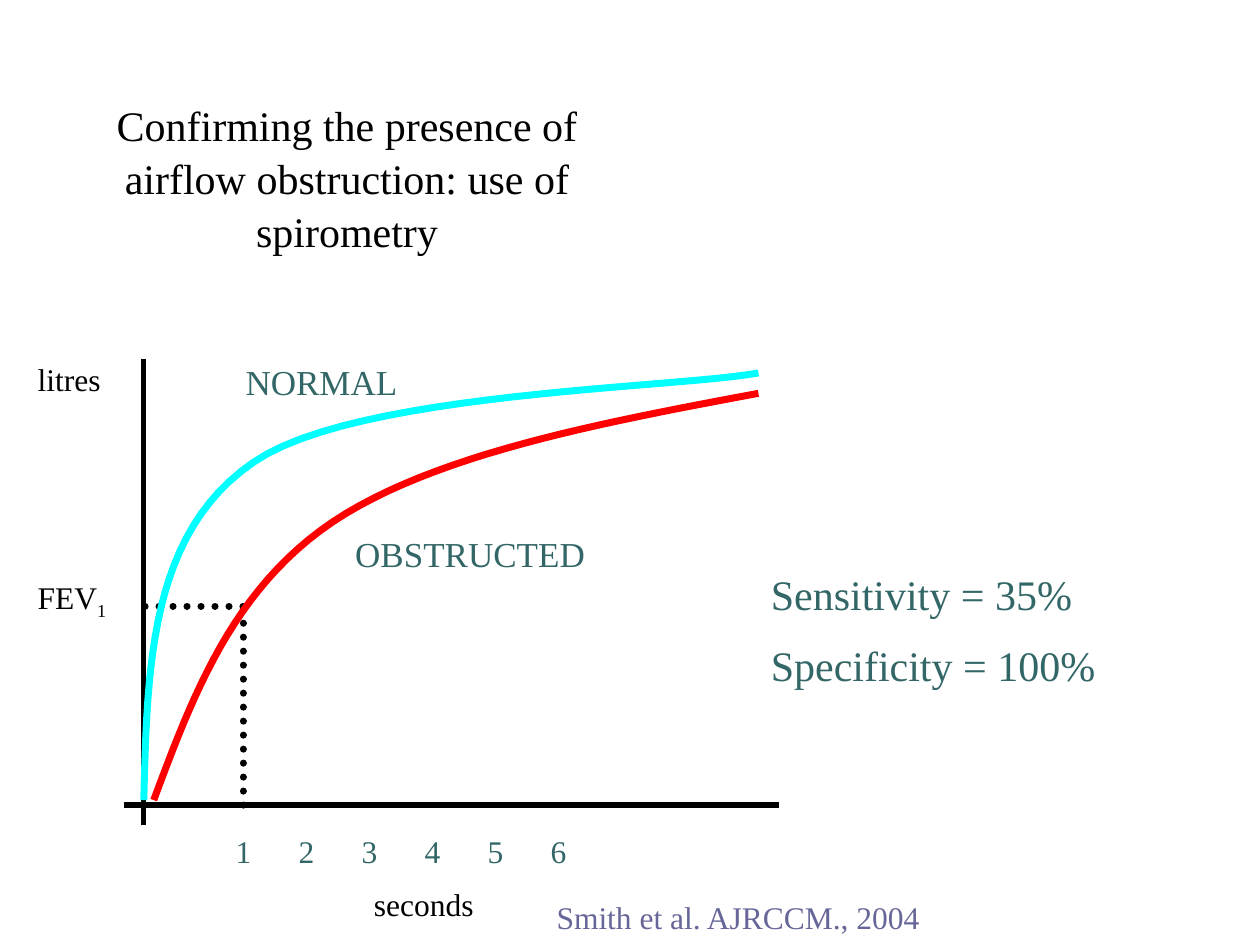
import lxml.etree
import pptx
import pptx.dml.color
import pptx.enum.dml
import pptx.enum.shapes
import pptx.enum.text
import pptx.oxml.ns
import pptx.util

Cm, Pt = pptx.util.Cm, pptx.util.Pt
qn = pptx.oxml.ns.qn
COLORS = {"ink": "000000", "teal": "336666", "cite": "666699",
          "normal": "00FFFF", "obstructed": "FF0000"}
FONT = "Times New Roman"


def rgb(name):
    return pptx.dml.color.RGBColor.from_string(COLORS[name])


def format_text(tf, size, color):
    tf.word_wrap = True
    tf.vertical_anchor = pptx.enum.text.MSO_ANCHOR.TOP
    for i, p in enumerate(tf.paragraphs):
        p.space_before = Pt(size / 2 if i else 0)
        for r in p.runs:
            r.font.name, r.font.size = FONT, Pt(size)
            r.font.color.rgb = rgb(color)


def add_text(shapes, box, text, size, color):
    tf = shapes.add_textbox(*(Cm(v) for v in box)).text_frame
    tf.text = text
    format_text(tf, size, color)
    return tf


def add_line(shapes, start, end, width, dotted=False):
    line = shapes.add_connector(pptx.enum.shapes.MSO_CONNECTOR.STRAIGHT,
                                *(Cm(v) for v in start + end))
    line.line.color.rgb = rgb("ink")
    line.line.width = Pt(width)
    if dotted:
        line.line.dash_style = pptx.enum.dml.MSO_LINE.ROUND_DOT
        line.line._get_or_add_ln().set("cap", "rnd")
    lxml.etree.SubElement(line._element.spPr, qn("a:effectLst"))


def bezier(p0, p1, p2, p3, steps=24):
    """Points after p0 along a cubic curve."""
    for i in range(1, steps + 1):
        t = i / steps
        u = 1 - t
        yield tuple(u**3 * a + 3 * u * u * t * b + 3 * u * t * t * c + t**3 * d
                    for a, b, c, d in zip(p0, p1, p2, p3))


def add_curve(shapes, knots, color):
    points = [knots[0]]
    for i in range(0, len(knots) - 1, 3):
        points += bezier(*knots[i:i + 4])
    points = [(Cm(x), Cm(y)) for x, y in points]
    builder = shapes.build_freeform(*points[0])
    builder.add_line_segments(points[1:], close=False)
    sp = builder.convert_to_shape()
    sp.shadow.inherit = False
    sp.fill.background()
    sp.line.color.rgb = rgb(color)
    sp.line.width = Pt(4)


def add_title(s, left, top, width, height):
    sp = s.shapes.title
    sp.left, sp.top, sp.width, sp.height = (Cm(v) for v in (left, top, width, height))
    tf = sp.text_frame
    tf.text = "Confirming the presence of airflow obstruction: use of spirometry"
    format_text(tf, 24, "ink")
    p = tf.paragraphs[0]
    p.alignment = pptx.enum.text.PP_ALIGN.CENTER
    p.line_spacing = 1.05


def add_spirogram(s, left, top):
    def at(x, y):
        return left + x, top + y

    def label(shapes, x, y, width, text, size=18, color="ink"):
        return add_text(shapes, at(x, y) + (width, 1.02), text, size, color)

    axis_x, axis_y = 2.39, 9.09
    fev_x, fev_y = 4.39, 5.08

    # Axis titles
    label(s.shapes, 0, 0, 2.21, "litres")
    label(s.shapes, 6.78, 10.57, 7.01, "seconds")
    p = label(s.shapes, 0, 4.39, 2.39, "FEV").paragraphs[0]
    r = p.add_run()
    r.text = "1"
    format_text(p._parent, 18, "ink")
    r._r.get_or_add_rPr().set("baseline", "-25000")

    # Axes, second marks and the FEV1 guide
    frame = s.shapes.add_group_shape().shapes
    add_line(frame, at(1.98, axis_y), at(15.19, axis_y), 3)
    ticks = label(frame, 3.99, 9.5, 9.6, "\t".join("123456"), color="teal")
    tabs = lxml.etree.SubElement(ticks.paragraphs[0]._p.get_or_add_pPr(), qn("a:tabLst"))
    for i in range(1, 6):
        lxml.etree.SubElement(tabs, qn("a:tab"), pos=str(Cm(1.27 * i)), algn="l")
    add_line(frame, at(fev_x, axis_y), at(fev_x, fev_y), 4, dotted=True)
    add_line(frame, at(fev_x, fev_y), at(axis_x, fev_y), 4, dotted=True)
    add_line(frame, at(axis_x, 0.1), at(axis_x, 9.5), 3)
    label(frame, 4.19, 0, 4.19, "NORMAL", 20, "teal")

    # Volume curves, as cubic control points
    curves = {
        "normal": [(2.39, 8.99), (2.46, 6.3), (2.51, 3.61), (4.6, 2.18),
                   (6.65, 0.76), (13.08, 0.69), (14.78, 0.38)],
        "obstructed": [(2.59, 8.99), (3.38, 6.88), (4.17, 4.75), (6.2, 3.38),
                       (8.23, 2.03), (11.51, 1.4), (14.78, 0.79)],
    }
    for name, knots in curves.items():
        add_curve(s.shapes, [at(*knot) for knot in knots], name)
    label(s.shapes, 6.4, 3.48, 5.99, "OBSTRUCTED", 20, "teal")


def main():
    prs = pptx.Presentation()
    prs.slide_width, prs.slide_height = Cm(25.4), Cm(19.05)
    s = prs.slides.add_slide(prs.slide_layouts[5])
    add_title(s, 1.7, 1.83, 10.59, 3.33)
    # Test accuracy and citation
    add_text(s.shapes, (15.29, 11.33, 8.41, 2.82),
             "Sensitivity = 35%\nSpecificity = 100%", 24, "teal")
    add_text(s.shapes, (10.97, 17.98, 10.01, 1.02),
             "Smith et al. AJRCCM., 2004", 18, "cite")
    add_spirogram(s, 0.51, 7.14)
    prs.save("out.pptx")


if __name__ == "__main__":
    main()
